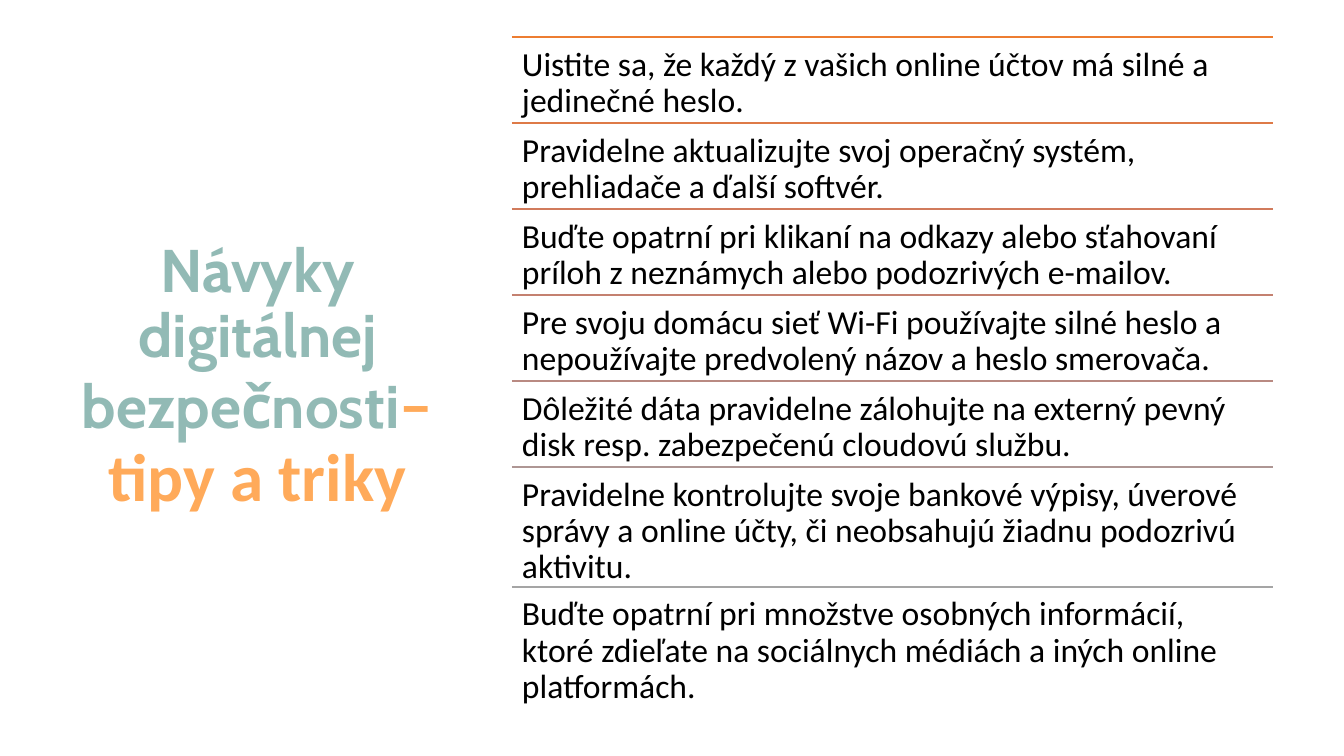
import pptx
import pptx.dml.color
import pptx.enum.shapes
import pptx.enum.text
import pptx.oxml.ns
import pptx.util
from lxml import etree

RGBColor = pptx.dml.color.RGBColor
Align = pptx.enum.text.PP_ALIGN
Anchor = pptx.enum.text.MSO_ANCHOR

SAGE = RGBColor(0x92, 0xBA, 0xB5)
ORANGE = RGBColor(0xFF, 0xAA, 0x5A)
BLACK = RGBColor(0x00, 0x00, 0x00)

# text, size in points, font, colour, bold
TITLE = [
    ("Návyky digitálnej bezpečnosti", 43, "Cabin", SAGE, True),
    ("– tipy a triky", 48, "Calibri", ORANGE, True),
]

# tip, row height in px, colour of the rule above it
TIPS = [
    ("Uistite sa, že každý z vašich online účtov má silné a jedinečné heslo.",
     86, RGBColor(0xED, 0x7D, 0x31)),
    ("Pravidelne aktualizujte svoj operačný systém, prehliadače a ďalší softvér.",
     86, RGBColor(0xDE, 0x7A, 0x47)),
    ("Buďte opatrní pri klikaní na odkazy alebo sťahovaní príloh z neznámych "
     "alebo podozrivých e-mailov.",
     86, RGBColor(0xD1, 0x7B, 0x5C)),
    ("Pre svoju domácu sieť Wi-Fi používajte silné heslo a nepoužívajte "
     "predvolený názov a heslo smerovača.",
     86, RGBColor(0xC4, 0x81, 0x70)),
    ("Dôležité dáta pravidelne zálohujte na externý pevný disk resp. "
     "zabezpečenú cloudovú službu.",
     86, RGBColor(0xB9, 0x8A, 0x82)),
    ("Pravidelne kontrolujte svoje bankové výpisy, úverové správy a online účty, "
     "či neobsahujú žiadnu podozrivú aktivitu.",
     120, RGBColor(0xAE, 0x96, 0x94)),
    ("Buďte opatrní pri množstve osobných informácií, ktoré zdieľate na "
     "sociálnych médiách a iných online platformách.",
     117, RGBColor(0xA5, 0xA5, 0xA5)),
]

PX_PER_INCH = 100.8
SLIDE_SIZE = (1344, 756)
TITLE_BOX = (69, 70, 377, 616)
TIPS_LEFT, TIPS_TOP, TIPS_WIDTH = 512, 37, 761
INSET = 10


def px(length):
    return pptx.util.Inches(length / PX_PER_INCH)


def add_text(slide, box, runs, align=Align.LEFT, anchor=Anchor.TOP, inset_y=INSET):
    frame = slide.shapes.add_textbox(*map(px, box)).text_frame
    frame.word_wrap = True
    frame.vertical_anchor = anchor
    frame.margin_left = frame.margin_right = px(INSET)
    frame.margin_top = frame.margin_bottom = px(inset_y)
    paragraph = frame.paragraphs[0]
    paragraph.alignment = align
    paragraph.line_spacing = 0.9
    for text, size, font, color, bold in runs:
        run = paragraph.add_run()
        run.text = text
        run.font.size = pptx.util.Pt(size)
        run.font.name = font
        run.font.bold = bold
        run.font.color.rgb = color


def add_rule(slide, left, top, width, color):
    rule = slide.shapes.add_connector(
        pptx.enum.shapes.MSO_CONNECTOR.STRAIGHT,
        px(left), px(top), px(left + width), px(top))
    rule.line.color.rgb = color
    rule.line.width = pptx.util.Pt(1)
    etree.SubElement(rule._element.spPr, pptx.oxml.ns.qn("a:effectLst"))


def main():
    deck = pptx.Presentation()
    deck.slide_width, deck.slide_height = map(px, SLIDE_SIZE)
    slide = deck.slides.add_slide(deck.slide_layouts[6])

    add_text(slide, TITLE_BOX, TITLE, align=Align.CENTER, anchor=Anchor.MIDDLE,
             inset_y=5)

    top = TIPS_TOP
    for tip, height, rule_color in TIPS:
        add_rule(slide, TIPS_LEFT, top, TIPS_WIDTH, rule_color)
        add_text(slide, (TIPS_LEFT, top, TIPS_WIDTH, height),
                 [(tip, 24, "Calibri", BLACK, False)])
        top += height

    deck.save("out.pptx")


if __name__ == "__main__":
    main()
